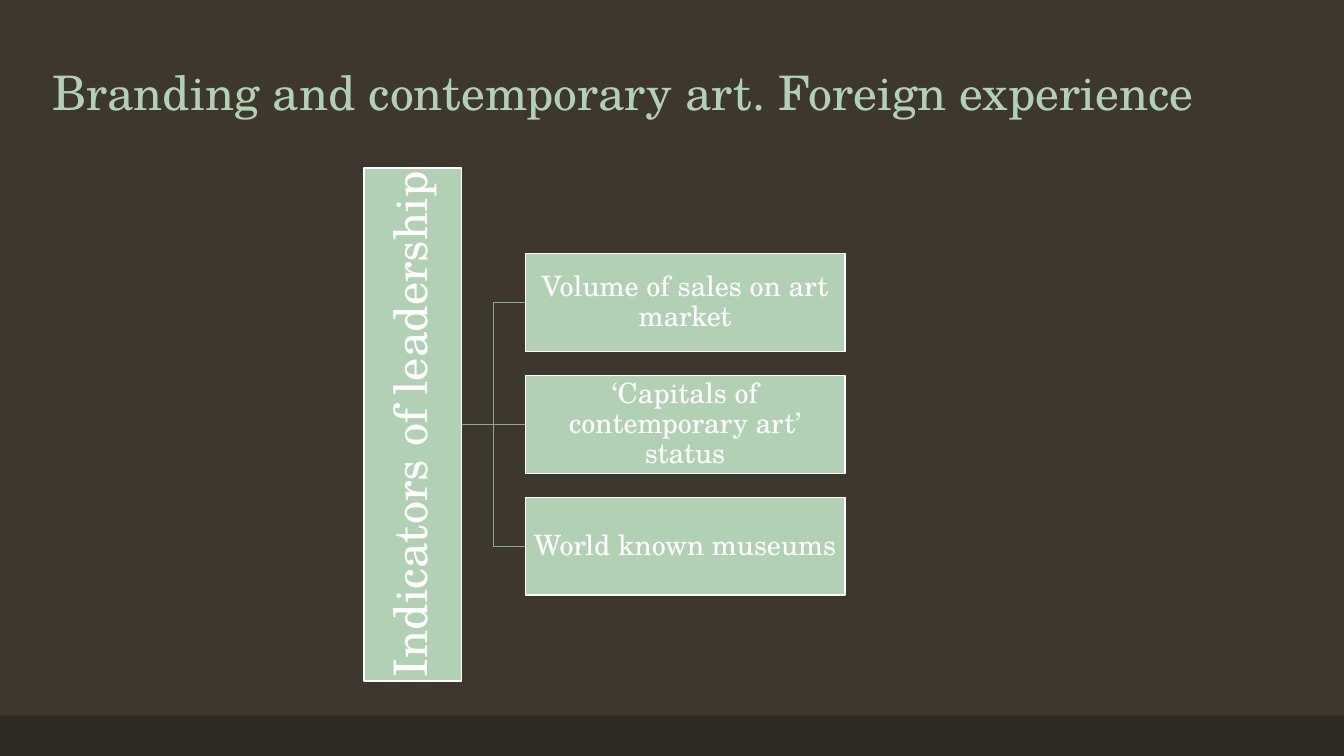
"""Build a slide with a horizontal hierarchy of leadership indicators."""
from pptx import Presentation
from pptx import util as u
from pptx.dml.color import RGBColor
from pptx.enum import shapes, text
from pptx.oxml.ns import qn

FONT = "TeX Gyre Schola"
BROWN = RGBColor(0x3D, 0x37, 0x2E)
DARK_BROWN = RGBColor(0x2E, 0x29, 0x23)
GREEN = RGBColor(0xB2, 0xD0, 0xB4)
LINE_GREEN = RGBColor(0x8F, 0xA7, 0x90)
WHITE = RGBColor(0xFF, 0xFF, 0xFF)

WIDTH, HEIGHT = 13.33, 7.5
FOOTER_HEIGHT = 0.4
BOX_WIDTH, BOX_HEIGHT = 3.17, 0.97
ROW_PITCH = 1.21
CENTER_Y = 4.21
ROOT_LENGTH = 5.09
ROOT_CENTER = 4.095
ROOT_EDGE, BOX_LEFT = 4.58, 5.21
INDICATORS = [
    "Volume of sales on art market",
    "‘Capitals of contemporary art’ status",
    "World known museums",
]


def write(box, words, size, color, align, anchor, inset=None, after=0):
    frame = box.text_frame
    frame.word_wrap = True
    frame.vertical_anchor = anchor
    if inset is not None:
        frame.margin_left = frame.margin_right = u.Inches(inset)
        frame.margin_top = frame.margin_bottom = u.Inches(inset)
    para = frame.paragraphs[0]
    para.alignment = align
    para.line_spacing = 0.9
    para.space_after = u.Pt(after)
    span = para.add_run()
    span.text = words
    span.font.name = FONT
    span.font.size = u.Pt(size)
    span.font.color.rgb = color


def add_box(left, top, width, height, fill, outline=None):
    box = page.shapes.add_shape(
        shapes.MSO_SHAPE.RECTANGLE,
        u.Inches(left), u.Inches(top), u.Inches(width), u.Inches(height))
    box.shadow.inherit = False
    box.fill.solid()
    box.fill.fore_color.rgb = fill
    if outline is None:
        box.line.fill.background()
    else:
        box.line.color.rgb = outline
        box.line.width = u.Pt(1)
    return box


deck = Presentation()
deck.slide_width, deck.slide_height = u.Inches(WIDTH), u.Inches(HEIGHT)
page = deck.slides.add_slide(deck.slide_layouts[6])
page.background.fill.solid()
page.background.fill.fore_color.rgb = BROWN

add_box(0, HEIGHT - FOOTER_HEIGHT, WIDTH, FOOTER_HEIGHT, DARK_BROWN)

title = page.shapes.add_textbox(u.Inches(0.42), 0, u.Inches(12), u.Inches(1.25))
write(title, "Branding and contemporary art. Foreign experience", size=34,
      color=GREEN, align=text.PP_ALIGN.LEFT, anchor=text.MSO_ANCHOR.BOTTOM)

root = add_box(ROOT_CENTER - ROOT_LENGTH / 2, CENTER_Y - BOX_HEIGHT / 2,
               ROOT_LENGTH, BOX_HEIGHT, GREEN, outline=WHITE)
root.rotation = 270
write(root, "Indicators of leadership", size=33, color=WHITE, inset=0.02, after=11,
      align=text.PP_ALIGN.CENTER, anchor=text.MSO_ANCHOR.MIDDLE)

for row, indicator in enumerate(INDICATORS):
    middle = CENTER_Y + (row - 1) * ROW_PITCH
    kind = shapes.MSO_CONNECTOR.STRAIGHT if row == 1 else shapes.MSO_CONNECTOR.ELBOW
    branch = page.shapes.add_connector(
        kind, u.Inches(ROOT_EDGE), u.Inches(CENTER_Y), u.Inches(BOX_LEFT), u.Inches(middle))
    branch.line.color.rgb = LINE_GREEN
    branch.line.width = u.Pt(1)
    properties = branch.element.find(qn("p:spPr"))
    properties.append(properties.makeelement(qn("a:effectLst"), {}))

    box = add_box(BOX_LEFT, middle - BOX_HEIGHT / 2, BOX_WIDTH, BOX_HEIGHT,
                  GREEN, outline=WHITE)
    write(box, indicator, size=20, color=WHITE, inset=0.01, after=7,
          align=text.PP_ALIGN.CENTER, anchor=text.MSO_ANCHOR.MIDDLE)

deck.save("out.pptx")
